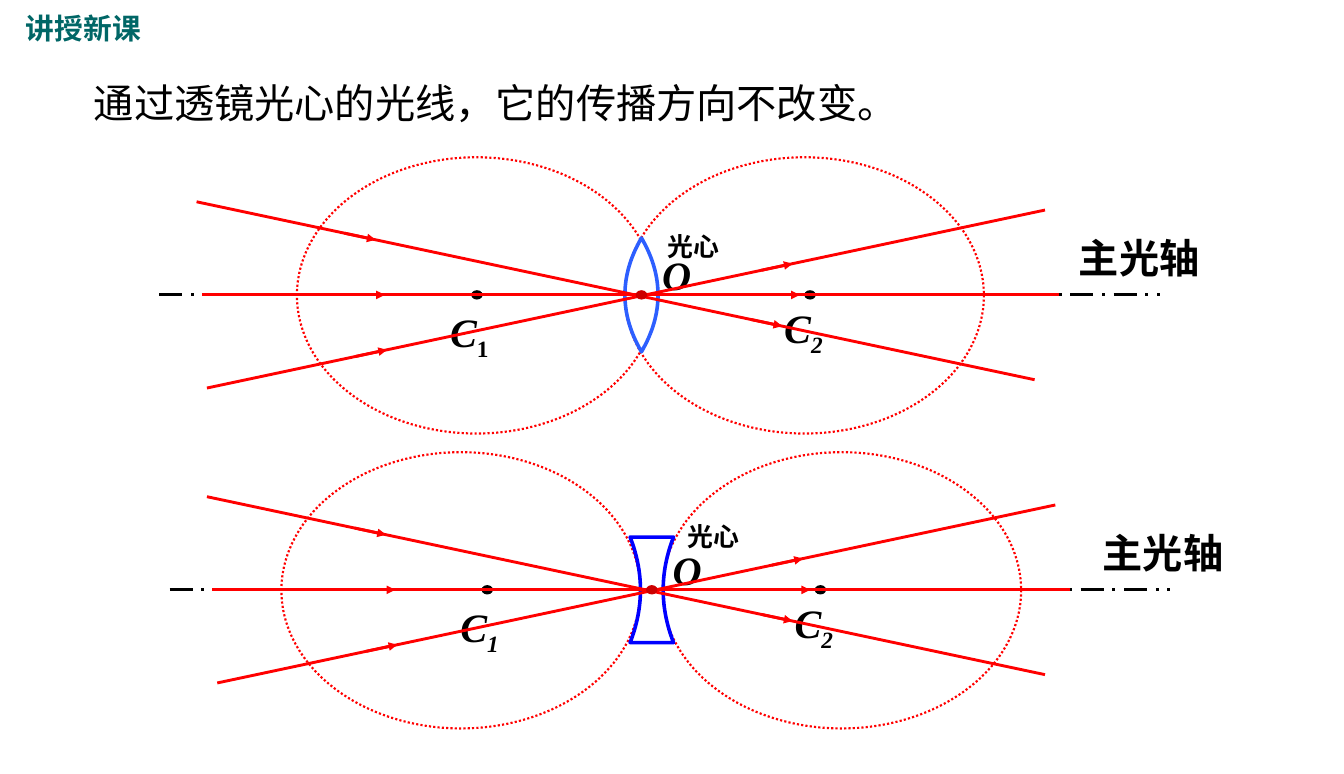
from pptx import Presentation, util as u
from pptx.dml.color import RGBColor
from pptx.enum import dml, shapes, text
from pptx.oxml import ns, xmlchemy as xc

PX = 9144  # 100 px to the inch
RED, BLACK = "FF0000", "000000"
SERIF, SANS, CJK = "Times New Roman", "Arial", "Noto Sans CJK SC"
DOT, DASH = dml.MSO_LINE.ROUND_DOT, dml.MSO_LINE.LONG_DASH_DOT
STEPS = range(-16, 17)

# Rays relative to the optical centre: start, end, left edges of the arrows
RAYS = [
    ((-430, -90), (380, 82), (-287, 106)),
    ((-420, 90), (390, -82), (-276, 116)),
    ((-425, 0), (404, 0), (-278, 123)),
]
CONVEX = dict(spheres=(-333, -16), waist=16, rim=0, half=55, color="2D5FFF",
              focus=(15, -67), axis=(413, -64), slant=False)
CONCAVE = dict(spheres=(-358, 10), waist=11, rim=21, half=51, color="0000FF",
               focus=(25, -72), axis=(426, -64), slant=True)


def px(n):
    return u.Emu(round(n * PX))


def rgb(code):
    return RGBColor.from_string(code)


def assign(obj, **vals):
    for key, val in vals.items():
        setattr(obj, key, val)


def stroke(item, color, width, dash=None):
    item.line.color.rgb = rgb(color)
    assign(item.line, width=u.Pt(width), dash_style=dash)


def paint(item, color):
    if color:
        item.fill.solid()
        item.fill.fore_color.rgb = rgb(color)
    else:
        item.fill.background()


def write(frame, words, size, font, color=BLACK, wrap=True, **style):
    assign(frame, word_wrap=wrap, vertical_anchor=text.MSO_ANCHOR.TOP,
           auto_size=text.MSO_AUTO_SIZE.NONE)
    par = frame.paragraphs[0]
    par.alignment = text.PP_ALIGN.LEFT
    run = par.add_run()
    run.text = words
    assign(run.font, size=u.Pt(size), name=font, **style)
    run.font.color.rgb = rgb(color)
    east = xc.OxmlElement("a:ea")
    east.set("typeface", CJK)
    run.font._element.find(ns.qn("a:latin")).addnext(east)
    return run


def label(page, box, words, size, font, inset=True, **style):
    frame = page.shapes.add_textbox(*map(px, box)).text_frame
    if not inset:
        assign(frame, margin_left=0, margin_top=0, margin_right=0, margin_bottom=0)
    write(frame, words, size, font, **style)
    return frame


def oval(page, box, fill, color, width, dash=None):
    item = page.shapes.add_shape(shapes.MSO_SHAPE.OVAL, *map(px, box))
    item.shadow.inherit = False
    paint(item, fill)
    stroke(item, color, width, dash)


def line(page, start, end, color, dash=None, arrow=False):
    item = page.shapes.add_connector(
        shapes.MSO_CONNECTOR.STRAIGHT, *map(px, (*start, *end)))
    stroke(item, color, 2, dash)
    if arrow:
        tail = xc.OxmlElement("a:tailEnd")
        tail.set("type", "triangle")
        item.line._get_or_add_ln().append(tail)
    item._element.spPr.append(xc.OxmlElement("a:effectLst"))


def ray(page, mid, start, end, marks):
    slope = (end[1] - start[1]) / (end[0] - start[0])

    def spot(x):
        return mid[0] + x, mid[1] + start[1] + (x - start[0]) * slope

    line(page, spot(start[0]), spot(end[0]), RED)
    for x in marks:
        line(page, spot(x), spot(x + 30), RED, arrow=True)


def lens(page, mid, waist, rim, half, color):
    # Both faces are parabolas from the waist to the rim
    face = [(waist + (rim - waist) * (k / 16) ** 2, half * k / 16) for k in STEPS]
    edge = face + [(-x, y) for x, y in reversed(face)]
    spots = [(px(mid[0] + x), px(mid[1] + y)) for x, y in edge]
    form = page.shapes.build_freeform(*spots[0])
    form.add_line_segments(spots[1:], close=True)
    item = form.convert_to_shape()
    item.shadow.inherit = False
    paint(item, "FFFFFF")
    stroke(item, color, 2.5)


def bench(page, mid, kind):
    cx, cy = mid

    # Spheres of the lens faces
    for x in kind["spheres"]:
        oval(page, (cx + x, cy - 133, 347, 267), None, RED, 1.5, DOT)

    # Centres of curvature
    for sub, x, left, top, slant in (("1", -164, -185, 12, kind["slant"]),
                                     ("2", 158, 138, 8, True)):
        oval(page, (cx + x, cy - 4, 10, 8), BLACK, BLACK, 0.75)
        frame = label(page, (cx + left, cy + top, 72, 47), "C", 28, SERIF,
                      inset=False, bold=True, italic=True)
        low = write(frame, sub, 28, SERIF, bold=True, italic=slant)
        low.font._element.set("baseline", "-25000")

    # Lens, axis and rays
    label(page, (cx + 20, cy - 43, 28, 47), "O", 28, SERIF,
          inset=False, wrap=False, bold=True, italic=True)
    lens(page, mid, *(kind[key] for key in ("waist", "rim", "half", "color")))
    line(page, (cx - 466, cy), (cx + 501, cy), BLACK, DASH)
    for start, end, marks in RAYS:
        ray(page, mid, start, end, marks)
    oval(page, (cx - 5, cy - 4, 10, 8), "CC0000", "CC0000", 0.75)

    # Names of the axis and the optical centre
    for words, key, size, high in (("主光轴", "axis", 28, 57), ("光心", "focus", 18, 40)):
        x, y = kind[key]
        label(page, (cx + x, cy + y, 185, high), words, size, SANS, bold=True)


def head(page, box):
    title = page.shapes.title
    left, top, width, height = map(px, box)
    assign(title, left=left, top=top, width=width, height=height)
    write(title.text_frame, "讲授新课", 20, SANS, "006666", bold=True)


def main():
    deck = Presentation()
    assign(deck, slide_width=px(1299), slide_height=px(748))
    page = deck.slides.add_slide(deck.slide_layouts[5])
    head(page, (15, 5, 184, 44))
    label(page, (81, 71, 1136, 57), "通过透镜光心的光线，它的传播方向不改变。", 28, CJK)
    bench(page, (620, 285), CONVEX)
    bench(page, (630, 570), CONCAVE)
    deck.save("out.pptx")


if __name__ == "__main__":
    main()
